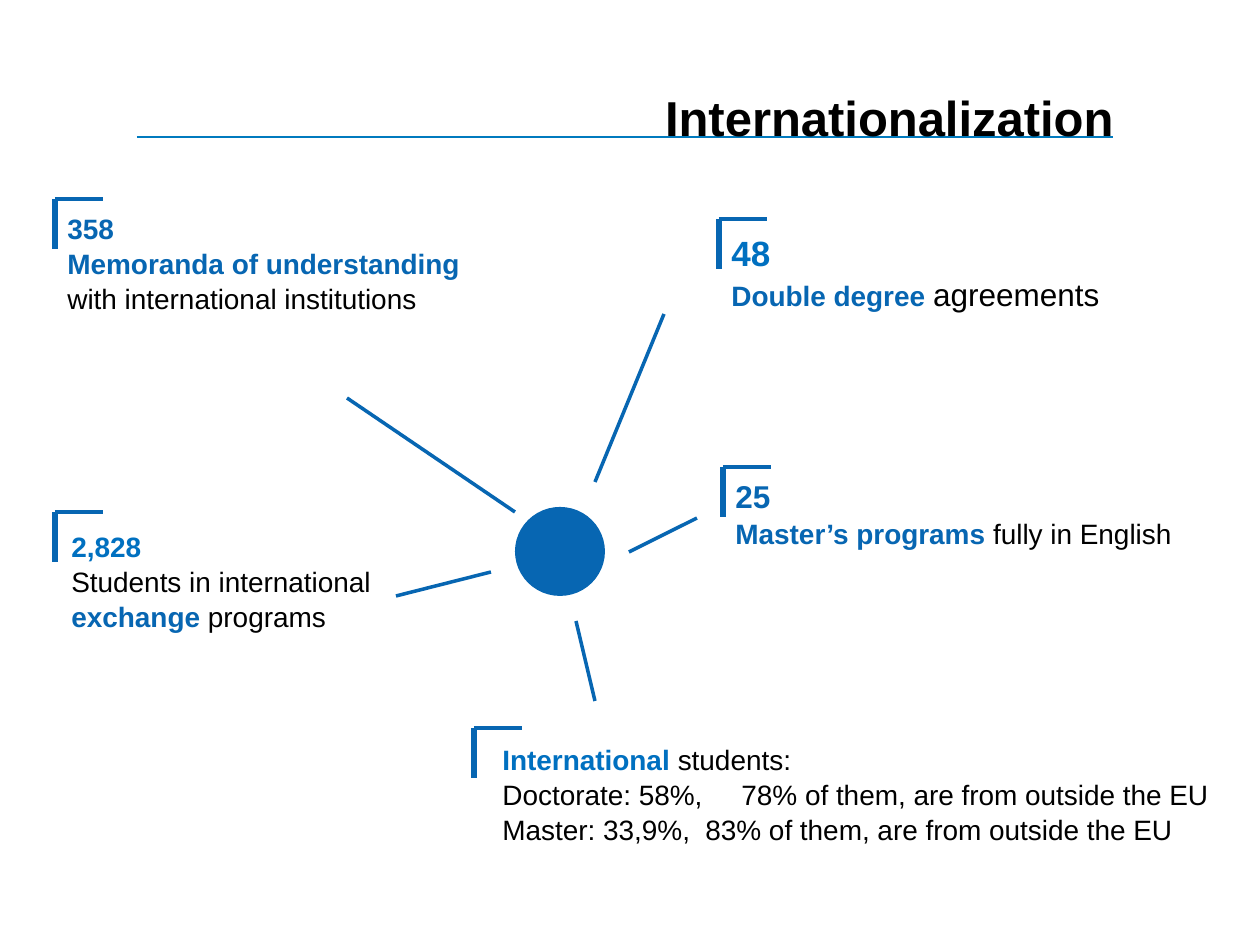
import pptx
import pptx.util
import pptx.dml.color
import pptx.enum.shapes
import pptx.enum.text
import pptx.oxml.ns
from lxml import etree

PX = 914400 / 126
THEME = {
    "font": "Arial",
    "blue": "0766B2", "bright": "0070C0", "rule": "007ABE", "black": "000000",
    "title": 28, "large": 20, "medium": 18, "body": 16,
    "thin": 0.75, "line": 2, "thick": 3, "spacing": 1.04,
}


def add_line(x1, y1, x2, y2, color="blue", width="line"):
    pts = [round(v * PX) for v in (x1, y1, x2, y2)]
    sp = slide.shapes.add_connector(pptx.enum.shapes.MSO_CONNECTOR.STRAIGHT, *pts)
    sp.line.color.rgb = pptx.dml.color.RGBColor.from_string(THEME[color])
    sp.line.width = pptx.util.Pt(THEME[width])
    etree.SubElement(sp._element.spPr, pptx.oxml.ns.qn("a:effectLst"))


def add_text(box, paragraphs, spacing=None, align=None, wrap=True, top=6):
    sp = slide.shapes.add_textbox(*[round(v * PX) for v in box])
    tf = sp.text_frame
    frame = {"word_wrap": wrap, "margin_top": round(top * PX)}
    for name, value in frame.items():
        setattr(tf, name, value)
    for i, (tab, runs) in enumerate(paragraphs):
        p = tf.paragraphs[0] if i == 0 else tf.add_paragraph()
        p.line_spacing = spacing
        p.alignment = align
        if tab:
            tabs = etree.SubElement(p._p.get_or_add_pPr(), pptx.oxml.ns.qn("a:tabLst"))
            etree.SubElement(tabs, pptx.oxml.ns.qn("a:tab"), pos=str(round(tab * PX)), algn="l")
        for text, size, color, bold in runs:
            r = p.add_run()
            r.text = text
            fmt = {"name": THEME["font"], "size": pptx.util.Pt(THEME[size]), "bold": bold}
            for name, value in fmt.items():
                setattr(r.font, name, value)
            r.font.color.rgb = pptx.dml.color.RGBColor.from_string(THEME[color])


prs = pptx.Presentation()
prs.slide_width = round(1260 * PX)
prs.slide_height = round(945 * PX)
slide = prs.slides.add_slide(prs.slide_layouts[6])

add_line(137, 137, 1113, 137, "rule", "thin")
add_text((446, 76, 680, 62), [(None, [("Internationalization", "title", "black", True)])],
         align=pptx.enum.text.PP_ALIGN.RIGHT, top=12)

hub = slide.shapes.add_shape(pptx.enum.shapes.MSO_SHAPE.OVAL,
                             *[round(v * PX) for v in (515, 507, 90, 89)])
hub.shadow.inherit = False
hub.fill.solid()
hub.fill.fore_color.rgb = pptx.dml.color.RGBColor.from_string(THEME["blue"])
hub.line.fill.background()

spokes = [
    (347, 398, 515, 512),
    (595, 482, 664, 314),
    (629, 552, 697, 518),
    (396, 596, 491, 572),
    (595, 701, 576, 621),
]
for spoke in spokes:
    add_line(*spoke)

brackets = [(55, 199), (719, 219), (723, 467), (474, 728), (55, 512)]
for x, y in brackets:
    add_line(x, y, x + 48, y)
    add_line(x, y + 50, x, y, width="thick")

facts = [
    ((55, 204, 423, 152), False, [
        (None, [("358", "body", "blue", True)]),
        (None, [("Memoranda of understanding", "body", "blue", True)]),
        (None, [("with international institutions", "body", "black", False)]),
    ]),
    ((719, 224, 536, 131), True, [
        (None, [("48", "large", "bright", True)]),
        (None, [("Double degree ", "body", "blue", True),
                ("agreements", "medium", "black", False)]),
    ]),
    ((723, 470, 635, 115), True, [
        (None, [("25", "medium", "blue", True)]),
        (None, [("Master’s programs ", "body", "blue", True),
                ("fully in English", "body", "black", False)]),
    ]),
    ((490, 735, 799, 158), True, [
        (None, [("International ", "body", "bright", True),
                ("students:", "body", "black", False)]),
        (239, [("Doctorate: 58%,\t78% of them, are from outside the EU", "body", "black", False)]),
        (203, [("Master: 33,9%,\t83% of them, are from outside the EU", "body", "black", False)]),
    ]),
    ((59, 522, 415, 118), True, [
        (None, [("2,828", "body", "bright", True)]),
        (None, [("Students in international ", "body", "black", False),
                ("exchange ", "body", "blue", True),
                ("programs", "body", "black", False)]),
    ]),
]
for box, wrap, paragraphs in facts:
    add_text(box, paragraphs, spacing=THEME["spacing"], wrap=wrap)

prs.save("out.pptx")
